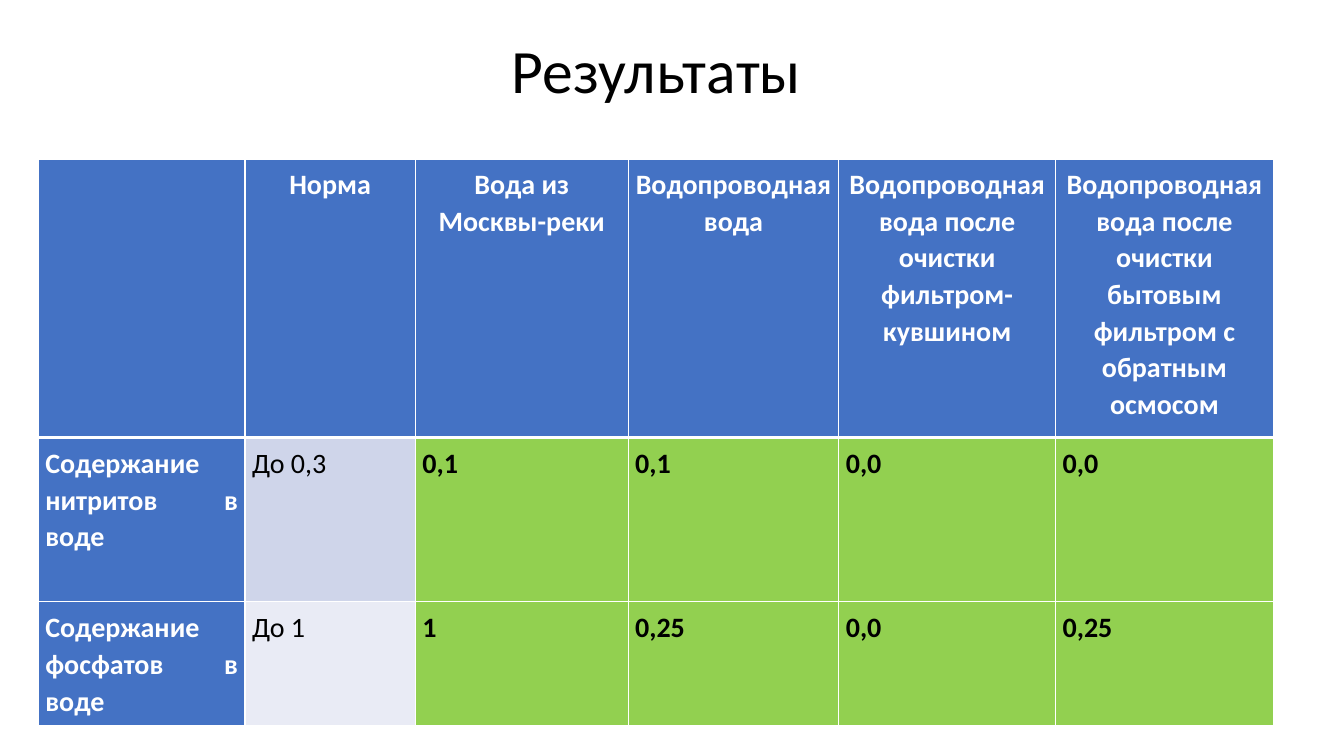
from dataclasses import dataclass

from lxml.etree import SubElement
from pptx import Presentation
from pptx.dml.color import RGBColor
from pptx.enum.text import MSO_ANCHOR, MSO_AUTO_SIZE, PP_ALIGN
from pptx.oxml.ns import qn
from pptx.util import Inches, Pt

FONT = "Calibri"
WHITE, BLACK = "FFFFFF", "000000"
BLUE, GREEN = "4472C4", "92D050"
BAND_FILLS = ["CFD5EA", "E9EBF5"]

# Shares of the slide's width and height, in percent
TITLE_BOX = (5.7, 0, 86.27, 19.33)
TABLE_LEFT, TABLE_TOP = 2.85, 21.07
COLUMN_SHARES = [15.38, 12.68, 15.83, 15.68, 16.13, 16.2]
ROW_SHARES = [36.8, 21.73, 15.07]

ROWS = [
    ["", "Норма", "Вода из Москвы-реки", "Водопроводная вода",
     "Водопроводная вода после очистки фильтром-кувшином",
     "Водопроводная вода после очистки бытовым фильтром с обратным осмосом"],
    ["Содержание нитритов в воде", "До 0,3", "0,1", "0,1", "0,0", "0,0"],
    ["Содержание фосфатов в воде", "До 1", "1", "0,25", "0,0", "0,25"],
]


@dataclass
class CellStyle:
    fill: str
    color: str
    bold: bool
    alignment: PP_ALIGN
    inset: float


def rgb(color: str) -> RGBColor:
    return RGBColor.from_string(color)


def style_for(row: int, column: int) -> CellStyle:
    if row == 0:
        return CellStyle(BLUE, WHITE, True, PP_ALIGN.CENTER, 0.06)
    if column == 0:
        return CellStyle(BLUE, WHITE, True, PP_ALIGN.JUSTIFY, 0.07)
    if column == 1:
        return CellStyle(BAND_FILLS[row - 1], BLACK, False, PP_ALIGN.JUSTIFY, 0.07)
    return CellStyle(GREEN, BLACK, True, PP_ALIGN.JUSTIFY, 0.07)


def format_font(font, size: float, color: str, bold: bool) -> None:
    font.name = FONT
    font.size = Pt(size)
    font.bold = bold
    font.color.rgb = rgb(color)


def add_borders(cell, row: int) -> None:
    """White cell borders, thicker between the header and the body."""
    properties = cell._tc.get_or_add_tcPr()
    widths = {"lnL": 1, "lnR": 1, "lnT": 3 if row == 1 else 1, "lnB": 3 if row == 0 else 1}
    for side, width in widths.items():
        line = SubElement(properties, qn(f"a:{side}"), w=str(Pt(width)))
        solid_fill = SubElement(line, qn("a:solidFill"))
        SubElement(solid_fill, qn("a:srgbClr"), val=WHITE)


def format_cell(cell, text: str, row: int, style: CellStyle) -> None:
    add_borders(cell, row)
    cell.fill.solid()
    cell.fill.fore_color.rgb = rgb(style.fill)
    cell.margin_left = cell.margin_right = Inches(style.inset)
    cell.margin_top = cell.margin_bottom = Inches(style.inset)
    cell.vertical_anchor = MSO_ANCHOR.TOP
    cell.text_frame.text = text
    paragraph = cell.text_frame.paragraphs[0]
    paragraph.alignment = style.alignment
    paragraph.line_spacing = 1.07
    paragraph.space_before = Pt(12)
    paragraph.space_after = Pt(8)
    for run in paragraph.runs:
        format_font(run.font, 20, style.color, style.bold)


def main() -> None:
    presentation = Presentation()
    presentation.slide_width = Inches(13.33)
    presentation.slide_height = Inches(7.5)
    slide = presentation.slides.add_slide(presentation.slide_layouts[5])

    def across(share: float) -> int:
        return round(presentation.slide_width * share / 100)

    def down(share: float) -> int:
        return round(presentation.slide_height * share / 100)

    title = slide.shapes.title
    left, top, width, height = TITLE_BOX
    title.left, title.top = across(left), down(top)
    title.width, title.height = across(width), down(height)
    title.text_frame.text = "Результаты"
    title.text_frame.auto_size = MSO_AUTO_SIZE.NONE
    title.text_frame.vertical_anchor = MSO_ANCHOR.MIDDLE
    heading = title.text_frame.paragraphs[0]
    heading.alignment = PP_ALIGN.CENTER
    heading.line_spacing = 0.9
    format_font(heading.runs[0].font, 44, BLACK, False)

    table = slide.shapes.add_table(
        len(ROWS), len(COLUMN_SHARES), across(TABLE_LEFT), down(TABLE_TOP),
        across(sum(COLUMN_SHARES)), down(sum(ROW_SHARES))).table
    for column, share in zip(table.columns, COLUMN_SHARES):
        column.width = across(share)
    for row, share in zip(table.rows, ROW_SHARES):
        row.height = down(share)
    for row_index, texts in enumerate(ROWS):
        for column_index, text in enumerate(texts):
            format_cell(table.cell(row_index, column_index), text, row_index,
                        style_for(row_index, column_index))

    presentation.save("out.pptx")


if __name__ == "__main__":
    main()
